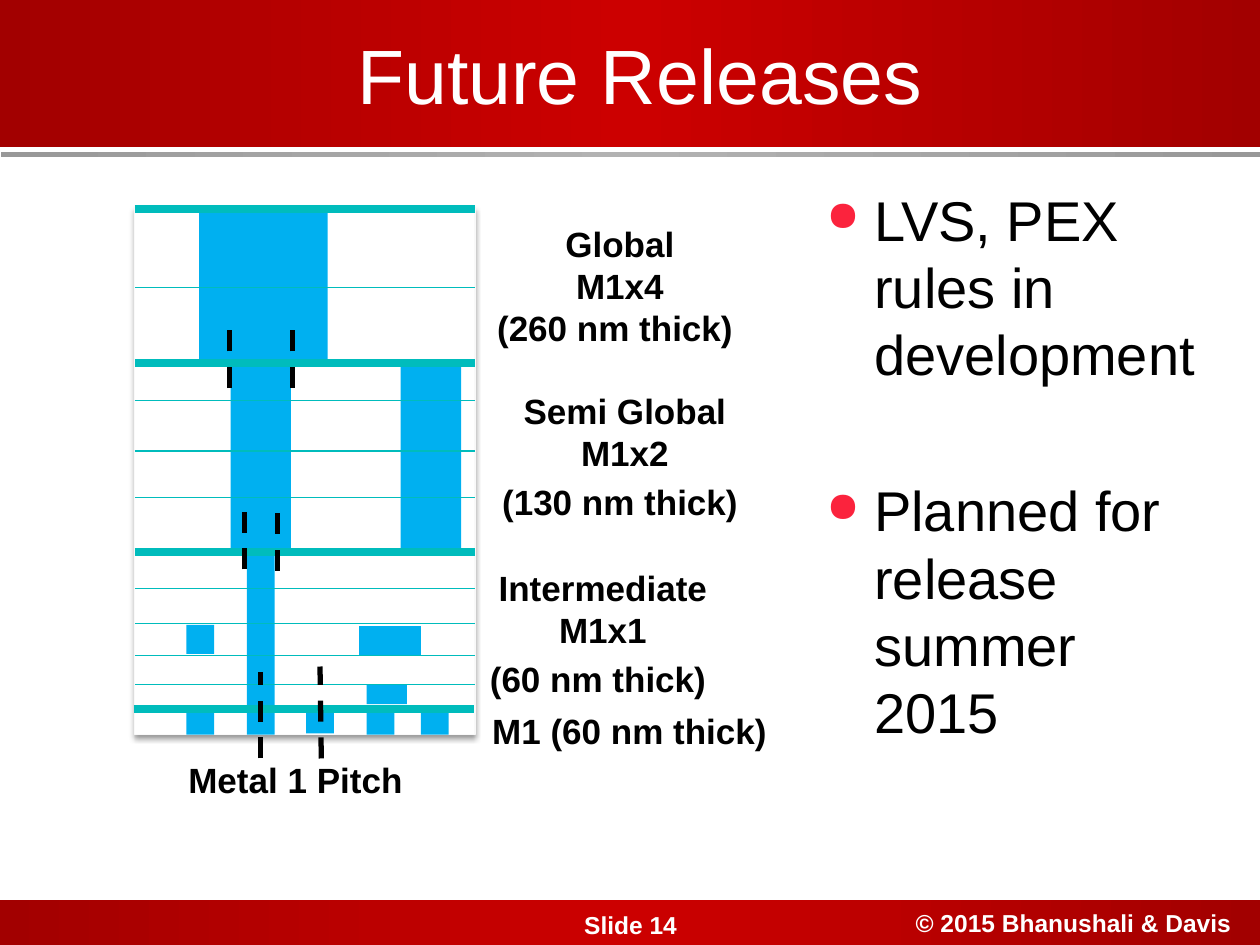
from copy import deepcopy

from lxml.etree import SubElement
from pptx import Presentation
from pptx.dml.color import RGBColor
from pptx.enum.dml import MSO_LINE
from pptx.enum.shapes import MSO_CONNECTOR, MSO_SHAPE
from pptx.enum.text import MSO_ANCHOR, PP_ALIGN
from pptx.oxml.ns import qn
from pptx.util import Inches, Pt


def color(value):
    return RGBColor.from_string(value)


def add_text(shapes, box, paragraphs, size, ink="000000", bold=False, wrap=False,
             align=PP_ALIGN.CENTER, gap=0, bullet=False):
    shape = shapes.add_textbox(*[Inches(value) for value in box])
    frame = shape.text_frame
    frame.word_wrap = wrap
    for index, text in enumerate(paragraphs):
        paragraph = frame.add_paragraph() if index else frame.paragraphs[0]
        paragraph.alignment = align
        if index:
            paragraph.space_before = Pt(gap)
        if bullet:
            properties = paragraph._p.get_or_add_pPr()
            properties.set("marL", str(Inches(0.38)))
            properties.set("indent", str(Inches(-0.38)))
            bullet_color = SubElement(properties, qn("a:buClr"))
            SubElement(bullet_color, qn("a:srgbClr"), val="FB233D")
            SubElement(properties, qn("a:buSzPct"), val="75000")
            SubElement(properties, qn("a:buChar"), char="●")
        for number, line in enumerate(text.split("\n")):
            if number:
                paragraph.add_line_break()
            run = paragraph.add_run()
            run.text = line
            run.font.name = "Arial"
            run.font.size = Pt(size)
            run.font.bold = bold
            run.font.color.rgb = color(ink)
    return shape


presentation = Presentation()
presentation.slide_width = Inches(10)
presentation.slide_height = Inches(7.5)
slide = presentation.slides.add_slide(presentation.slide_layouts[6])

bands = [
    ((0, -0.06, 10.02, 1.23), "A20000", "CC0000"),
    ((-0.01, 7.14, 10.02, 0.38), "A20000", "CC0000"),
    ((0.01, 1.21, 9.99, 0.04), "989898", "B2B2B2"),
]
for box, edge, middle in bands:
    band = slide.shapes.add_shape(MSO_SHAPE.RECTANGLE, *[Inches(value) for value in box])
    band.shadow.inherit = False
    band.line.fill.background()
    band.fill.gradient()
    band.fill.gradient_angle = 0
    stops = band._element.spPr.find(qn("a:gradFill")).find(qn("a:gsLst"))
    stops.append(deepcopy(stops[0]))
    for stop, position, value in zip(band.fill.gradient_stops, (0, 0.5, 1), (edge, middle, edge)):
        stop.position = position
        stop.color.rgb = color(value)

add_text(slide.shapes, (4.53, 7.17, 0.95, 0.33), ["Slide 14"], 14, "FFFFFF", True)
add_text(slide.shapes, (7.01, 7.16, 3.02, 0.34), ["© 2015 Bhanushali & Davis"],
         14, "FFFFFF", True, wrap=True)
title = add_text(slide.shapes, (0.83, 0.08, 8.5, 0.92), ["Future Releases"],
                 44, "FFFFFF", wrap=True)
title.text_frame.vertical_anchor = MSO_ANCHOR.BOTTOM
add_text(slide.shapes, (6.46, 1.42, 3.21, 5.5),
         ["LVS, PEX rules in development", "Planned for release summer 2015"],
         32, wrap=True, align=PP_ALIGN.LEFT, gap=51, bullet=True)

diagram = slide.shapes.add_group_shape().shapes

panel = diagram.add_shape(MSO_SHAPE.RECTANGLE, Inches(1.07), Inches(1.65), Inches(2.7), Inches(4.18))
panel.fill.solid()
panel.fill.fore_color.rgb = color("FFFFFF")
panel.line.color.rgb = color("F9F9F9")
panel.line.width = Pt(0.75)
panel.shadow.inherit = False
effects = panel._element.spPr.find(qn("a:effectLst"))
shadow = SubElement(effects, qn("a:outerShdw"), blurRad=str(Pt(3.1)), dist=str(Pt(1.6)),
                    dir="5400000", rotWithShape="0")
shadow_color = SubElement(shadow, qn("a:srgbClr"), val="000000")
SubElement(shadow_color, qn("a:alpha"), val="38000")

metal_blocks = [
    (1.48, 5.64, 0.22, 0.19), (1.96, 5.64, 0.22, 0.19), (2.43, 5.63, 0.22, 0.19),
    (2.91, 5.64, 0.22, 0.19), (3.34, 5.64, 0.22, 0.19), (1.96, 4.38, 0.22, 1.26),
    (1.83, 2.9, 0.48, 1.48), (1.58, 1.68, 1.02, 1.19), (3.18, 2.88, 0.48, 1.5),
    (1.48, 4.96, 0.22, 0.23), (2.85, 4.97, 0.49, 0.23), (2.91, 5.43, 0.32, 0.16),
]
for box in metal_blocks:
    block = diagram.add_shape(MSO_SHAPE.RECTANGLE, *[Inches(value) for value in box])
    block.shadow.inherit = False
    block.fill.solid()
    block.fill.fore_color.rgb = color("00B0F0")
    block.line.fill.background()

thin_levels = [2.28, 3.18, 3.58, 3.95, 4.67, 4.95, 5.2, 5.43]
thick_levels = [1.66, 2.88, 4.38]
lines = [((1.07, y, 3.77, y), "00BCBC", 0.75, None) for y in thin_levels]
lines += [((1.07, y, 3.77, y), "00BCBC", 4.5, None) for y in thick_levels]
lines.append(((1.06, 5.63, 3.76, 5.63), "00BCBC", 4.5, None))
pitch_marks = [
    (2.07, 6.02, 2.07, 5.33), (2.55, 6.02, 2.54, 5.29),
    (2.2, 4.53, 2.2, 4.05), (1.94, 4.52, 1.94, 4.05),
    (2.32, 3.08, 2.32, 2.6), (1.82, 3.08, 1.82, 2.6),
]
lines += [(ends, "000000", 3, MSO_LINE.DASH) for ends in pitch_marks]
for ends, ink, width, dash in lines:
    connector = diagram.add_connector(MSO_CONNECTOR.STRAIGHT, *[Inches(value) for value in ends])
    connector.line.color.rgb = color(ink)
    connector.line.width = Pt(width)
    if dash:
        connector.line.dash_style = dash
    SubElement(connector._element.spPr, qn("a:effectLst"))

labels = [
    ((3.84, 1.72, 2.16, 1.11), ["Global\nM1x4\n(260 nm thick) "]),
    ((3.88, 3.04, 2.16, 1.18), ["Semi Global\nM1x2", "(130 nm thick) "]),
    ((3.78, 4.45, 2.01, 1.18), ["Intermediate\nM1x1", "(60 nm thick) "]),
    ((3.8, 5.58, 2.47, 0.44), ["M1 (60 nm thick) "]),
    ((1.39, 5.97, 1.91, 0.44), ["Metal 1 Pitch"]),
]
for box, paragraphs in labels:
    add_text(diagram, box, paragraphs, 20, bold=True, gap=4)

presentation.save("out.pptx")
